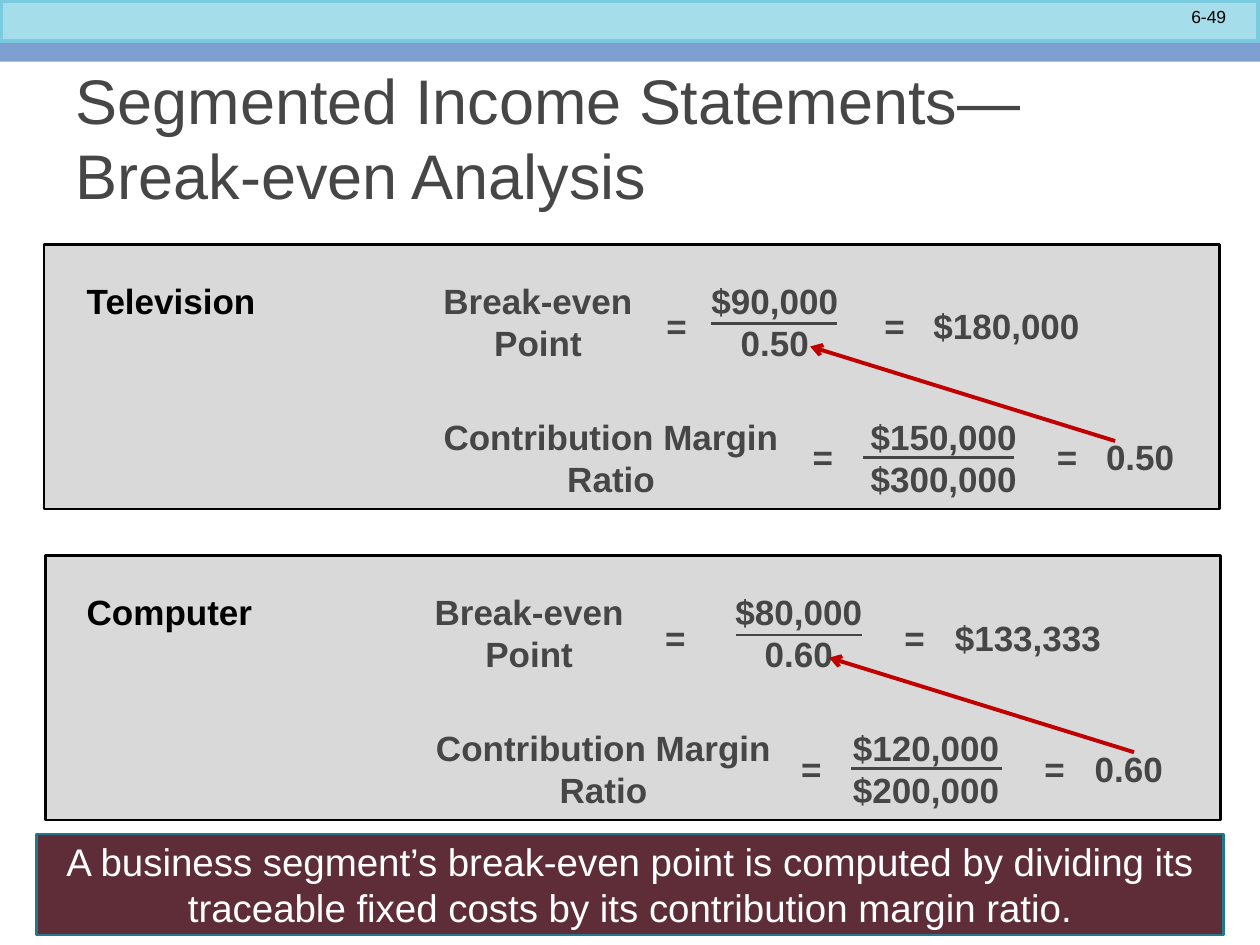
import pptx
import pptx.dml.color
import pptx.enum.shapes
import pptx.enum.text
import pptx.oxml.ns
import pptx.util
from dataclasses import dataclass
from lxml import etree

Inches = pptx.util.Inches
Align = pptx.enum.text.PP_ALIGN
Anchor = pptx.enum.text.MSO_ANCHOR


@dataclass(frozen=True)
class Theme:
    """Colours, type sizes and line widths of the slide."""
    font: str = "Arial"
    ink: str = "464646"
    black: str = "000000"
    white: str = "FFFFFF"
    panel: str = "D9D9D9"
    banner: str = "5E2D37"
    banner_edge: str = "21788D"
    header: str = "A6DDEA"
    header_edge: str = "7ACBE0"
    strip: str = "7DA0D0"
    arrow: str = "C00000"
    title_size: float = 36
    banner_size: float = 22
    body_size: float = 20
    number_size: float = 10
    thin: float = 1.5
    arrow_width: float = 2.25
    header_width: float = 4


@dataclass(frozen=True)
class Equation:
    """A label equal to a fraction equal to a result, with x positions in inches."""
    label: str
    label_center: float
    equals_centers: tuple
    fraction: str
    fraction_center: float
    bar: tuple
    result: str
    result_left: float


THEME = Theme()
PANEL_SIZE = (9.33, 2.1)
ROW_OFFSETS = (0.23, 1.31)
RESULT_OFFSETS = (0.43, 1.47)
BAR_OFFSETS = (0.63, 1.69)
ARROW_OFFSETS = (1.56, 0.81)

PANELS = (
    ("Television", 0.35, 1.94, (8.85, 6.43), (
        Equation("Break-even\nPoint", 4.27, (5.37, 7.1), "$90,000\n0.50",
                 6.15, (5.64, 6.64), "$180,000", 7.41),
        Equation("Contribution Margin\nRatio", 4.85, (6.53, 8.47), "$150,000\n$300,000",
                 7.49, (6.85, 8.05), "0.50", 8.78))),
    ("Computer", 0.36, 4.41, (9, 6.58), (
        Equation("Break-even\nPoint", 4.2, (5.36, 7.26), "$80,000\n0.60",
                 6.34, (5.84, 6.84), "$133,333", 7.58),
        Equation("Contribution Margin\nRatio", 4.79, (6.44, 8.37), "$120,000\n$200,000",
                 7.35, (6.75, 7.95), "0.60", 8.69))),
)


def rgb(value):
    """Return a colour object for a hex string."""
    return pptx.dml.color.RGBColor.from_string(value)


def write(text_frame, text, size, color, align, bold=False):
    """Put formatted text into a text frame."""
    text_frame.text = text
    for paragraph in text_frame.paragraphs:
        paragraph.alignment = align
        for run in paragraph.runs:
            run.font.name = THEME.font
            run.font.size = pptx.util.Pt(size)
            run.font.bold = bold
            run.font.color.rgb = rgb(color)


def add_rectangle(shapes, left, top, width, height, fill, edge=None, edge_width=0):
    """Add a flat rectangle, outlined when an edge colour is given."""
    shape = shapes.add_shape(pptx.enum.shapes.MSO_SHAPE.RECTANGLE, Inches(left),
                             Inches(top), Inches(width), Inches(height))
    shape.shadow.inherit = False
    shape.fill.solid()
    shape.fill.fore_color.rgb = rgb(fill)
    if edge:
        shape.line.color.rgb = rgb(edge)
        shape.line.width = pptx.util.Pt(edge_width)
    else:
        shape.line.fill.background()
    return shape


def add_text(shapes, left, top, width, height, text, size, color,
             align=Align.LEFT, bold=True):
    """Add a wrapping text box."""
    box = shapes.add_textbox(Inches(left), Inches(top), Inches(width), Inches(height))
    box.text_frame.word_wrap = True
    write(box.text_frame, text, size, color, align, bold)


def add_centered(shapes, center, top, width, height, text):
    """Add body text centred on an x position."""
    add_text(shapes, center - width / 2, top, width, height, text,
             THEME.body_size, THEME.ink, Align.CENTER)


def add_line(shapes, start, end, color, width, arrow=False):
    """Add a straight line, with an arrowhead at its end on request."""
    line = shapes.add_connector(pptx.enum.shapes.MSO_CONNECTOR.STRAIGHT,
                                *(Inches(value) for value in start + end))
    line.line.color.rgb = rgb(color)
    line.line.width = pptx.util.Pt(width)
    qn = pptx.oxml.ns.qn
    if arrow:
        etree.SubElement(line.line._get_or_add_ln(), qn("a:tailEnd"), type="arrow")
    etree.SubElement(line._element.spPr, qn("a:effectLst"))


def add_equation(shapes, equation, row_top, result_top, bar_y):
    """Add one equation as aligned pieces and a fraction bar."""
    add_centered(shapes, equation.label_center, row_top, 3, 0.77, equation.label)
    add_centered(shapes, equation.fraction_center, row_top, 1.6, 0.77, equation.fraction)
    for center in equation.equals_centers:
        add_centered(shapes, center, result_top, 0.5, 0.43, "=")
    add_text(shapes, equation.result_left - 0.1, result_top, 1.5, 0.43,
             equation.result, THEME.body_size, THEME.ink)
    start, end = equation.bar
    add_line(shapes, (start, bar_y), (end, bar_y), THEME.ink, THEME.thin)


def add_panel(slide, name, left, top, arrow_xs, equations):
    """Add one segment's grouped panel with its equations and arrow."""
    shapes = slide.shapes.add_group_shape().shapes
    add_rectangle(shapes, left, top, *PANEL_SIZE, THEME.panel, THEME.black, THEME.thin)
    add_text(shapes, 0.59, top + ROW_OFFSETS[0], 1.6, 0.44, name,
             THEME.body_size, THEME.black)
    for equation, *offsets in zip(equations, ROW_OFFSETS, RESULT_OFFSETS, BAR_OFFSETS):
        add_equation(shapes, equation, *(top + offset for offset in offsets))
    start, end = ((x, top + offset) for x, offset in zip(arrow_xs, ARROW_OFFSETS))
    add_line(shapes, start, end, THEME.arrow, THEME.arrow_width, arrow=True)


def add_header(slide):
    """Add the header bands and the slide number."""
    add_rectangle(slide.shapes, 0, 0, 10, 0.34, THEME.header,
                  THEME.header_edge, THEME.header_width)
    for top, height in ((0.4, 0.09), (0.34, 0.1)):
        add_rectangle(slide.shapes, 0, top, 10, height, THEME.strip)
    add_text(slide.shapes, 8.5, 0, 1.33, 0.27, "6-49", THEME.number_size,
             THEME.black, Align.RIGHT, bold=False)


def set_title(slide, text):
    """Place and format the title placeholder."""
    title = slide.shapes.title
    title.left, title.top = Inches(0.5), Inches(0.5)
    title.width, title.height = Inches(9), Inches(1.17)
    title.text_frame.vertical_anchor = Anchor.MIDDLE
    write(title.text_frame, text, THEME.title_size, THEME.ink, Align.LEFT)


def add_banner(slide, text):
    """Add the conclusion along the bottom."""
    banner = add_rectangle(slide.shapes, 0.29, 6.62, 9.42, 0.8, THEME.banner,
                           THEME.banner_edge, THEME.thin)
    banner.text_frame.word_wrap = True
    banner.text_frame.vertical_anchor = Anchor.MIDDLE
    write(banner.text_frame, text, THEME.banner_size, THEME.white, Align.CENTER)


def main():
    """Build the slide and save it."""
    presentation = pptx.Presentation()
    presentation.slide_width, presentation.slide_height = Inches(10), Inches(7.5)
    slide = presentation.slides.add_slide(presentation.slide_layouts[5])
    add_header(slide)
    set_title(slide, "Segmented Income Statements— Break-even Analysis")
    add_banner(slide, "A business segment’s break-even point is computed by dividing "
                      "its traceable fixed costs by its contribution margin ratio.")
    for panel in PANELS:
        add_panel(slide, *panel)
    presentation.save("out.pptx")


if __name__ == "__main__":
    main()
